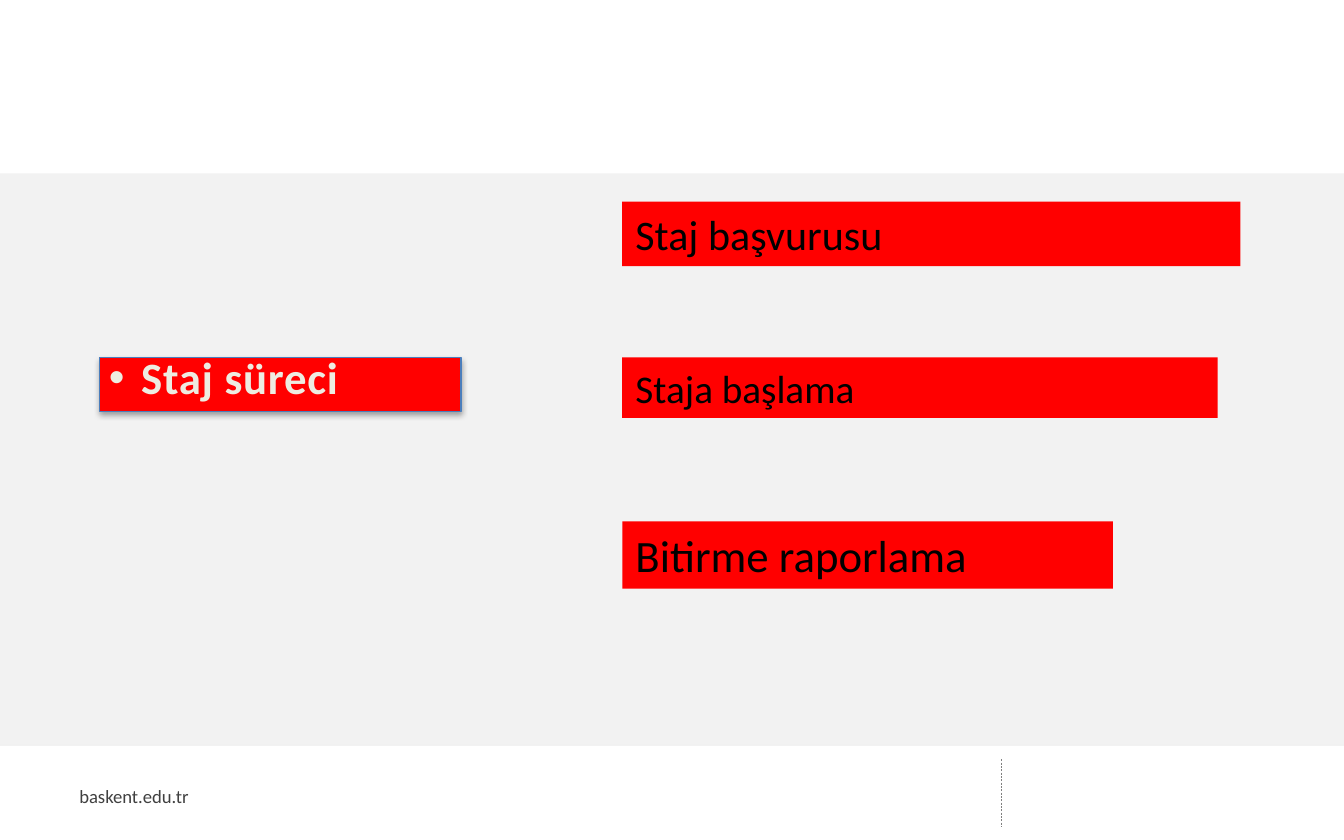
from dataclasses import dataclass

from lxml import etree
from pptx import Presentation
from pptx.dml.color import RGBColor
from pptx.enum.dml import MSO_LINE
from pptx.enum.shapes import MSO_CONNECTOR, MSO_SHAPE
from pptx.enum.text import MSO_ANCHOR, MSO_AUTO_SIZE, PP_ALIGN
from pptx.oxml.ns import qn
from pptx.util import Inches, Pt


@dataclass(frozen=True)
class Theme:
    font: str = "Calibri"
    page: RGBColor = RGBColor(0xF2, 0xF2, 0xF2)
    band: RGBColor = RGBColor(0xFF, 0xFF, 0xFF)
    accent: RGBColor = RGBColor(0xFF, 0x00, 0x00)
    outline: RGBColor = RGBColor(0x4B, 0x7E, 0xBC)
    divider: RGBColor = RGBColor(0x80, 0x80, 0x80)
    topic_text: RGBColor = RGBColor(0xEE, 0xEC, 0xE1)
    step_text: RGBColor = RGBColor(0x00, 0x00, 0x00)
    footer_text: RGBColor = RGBColor(0x40, 0x40, 0x40)
    topic_size: float = 24
    footer_size: float = 10


theme = Theme()


def add_span(para, text, size, color):
    span = para.add_run()
    span.text = text
    span.font.name = theme.font
    span.font.size = Pt(size)
    span.font.color.rgb = color
    return span


def add_soft_shadow(shape):
    """Give the shape a short downward shadow at 35 % black."""
    shape.shadow.inherit = False
    effects = shape._element.spPr.find(qn("a:effectLst"))
    outer = etree.SubElement(effects, qn("a:outerShdw"), blurRad=str(Pt(3.1)),
                             dist=str(Pt(1.8)), dir="5400000", rotWithShape="0")
    color = etree.SubElement(outer, qn("a:srgbClr"), val="000000")
    etree.SubElement(color, qn("a:alpha"), val="35000")


deck = Presentation()
deck.slide_width = Inches(10)
deck.slide_height = Inches(6.25)
page = deck.slides.add_slide(deck.slide_layouts.get_by_name("Title and Content"))
page.background.fill.solid()
page.background.fill.fore_color.rgb = theme.page
empty_title = page.shapes.title._element
empty_title.getparent().remove(empty_title)
topic = page.placeholders[1]

# White bands at the top and bottom
for top, height, shadowed in [(5.55, 0.7, True), (0, 1.29, False)]:
    band = page.shapes.add_shape(MSO_SHAPE.RECTANGLE, 0, Inches(top),
                                 deck.slide_width, Inches(height))
    band.fill.solid()
    band.fill.fore_color.rgb = theme.band
    band.line.fill.background()
    band.shadow.inherit = False
    if shadowed:
        add_soft_shadow(band)

# Footer
footer = page.shapes.add_textbox(Inches(0.59), Inches(5.79), Inches(1.98), Inches(0.27))
frame = footer.text_frame
frame.word_wrap = True
frame.vertical_anchor = MSO_ANCHOR.MIDDLE
frame.margin_left = frame.margin_right = frame.margin_top = frame.margin_bottom = 0
add_span(frame.paragraphs[0], "baskent.edu.tr", theme.footer_size, theme.footer_text)

divider = page.shapes.add_connector(MSO_CONNECTOR.STRAIGHT, Inches(7.45), Inches(5.65),
                                    Inches(7.45), Inches(6.15))
divider.line.color.rgb = theme.divider
divider.line.width = Pt(0.25)
divider.line.dash_style = MSO_LINE.DASH
etree.SubElement(divider._element.spPr, qn("a:effectLst"))

# Topic on the left
topic.left, topic.top = Inches(0.74), Inches(2.66)
topic.width, topic.height = Inches(2.69), Inches(0.4)
topic.fill.solid()
topic.fill.fore_color.rgb = theme.accent
topic.line.color.rgb = theme.outline
topic.line.width = Pt(0.75)
add_soft_shadow(topic)
frame = topic.text_frame
frame.word_wrap = True
frame.auto_size = MSO_AUTO_SIZE.NONE
frame.vertical_anchor = MSO_ANCHOR.TOP
frame.margin_left = frame.margin_right = Inches(0.07)
frame.margin_top = frame.margin_bottom = Inches(0.04)
para = frame.paragraphs[0]
properties = para._p.get_or_add_pPr()
properties.set("marL", str(Inches(0.24)))
properties.set("indent", str(Inches(-0.24)))
etree.SubElement(properties, qn("a:buFont"), typeface="Arial")
etree.SubElement(properties, qn("a:buChar"), char="•")
para.alignment = PP_ALIGN.LEFT
para.line_spacing = Pt(22)
para.space_before = Pt(0)
span = add_span(para, "Staj süreci", theme.topic_size, theme.topic_text)
span.font.bold = True
span.font._element.set("spc", "40")

# Steps on the right
steps = [
    ("Staj başvurusu", 1.5, 4.6, 0.48, 22.5),
    ("Staja başlama", 2.66, 4.43, 0.45, 21),
    ("Bitirme raporlama", 3.88, 3.65, 0.5, 24),
]
for text, top, width, height, size in steps:
    box = page.shapes.add_textbox(Inches(4.63), Inches(top), Inches(width), Inches(height))
    box.fill.solid()
    box.fill.fore_color.rgb = theme.accent
    box.text_frame.word_wrap = True
    box.text_frame.auto_size = MSO_AUTO_SIZE.SHAPE_TO_FIT_TEXT
    add_span(box.text_frame.paragraphs[0], text, size, theme.step_text)

deck.save("out.pptx")
